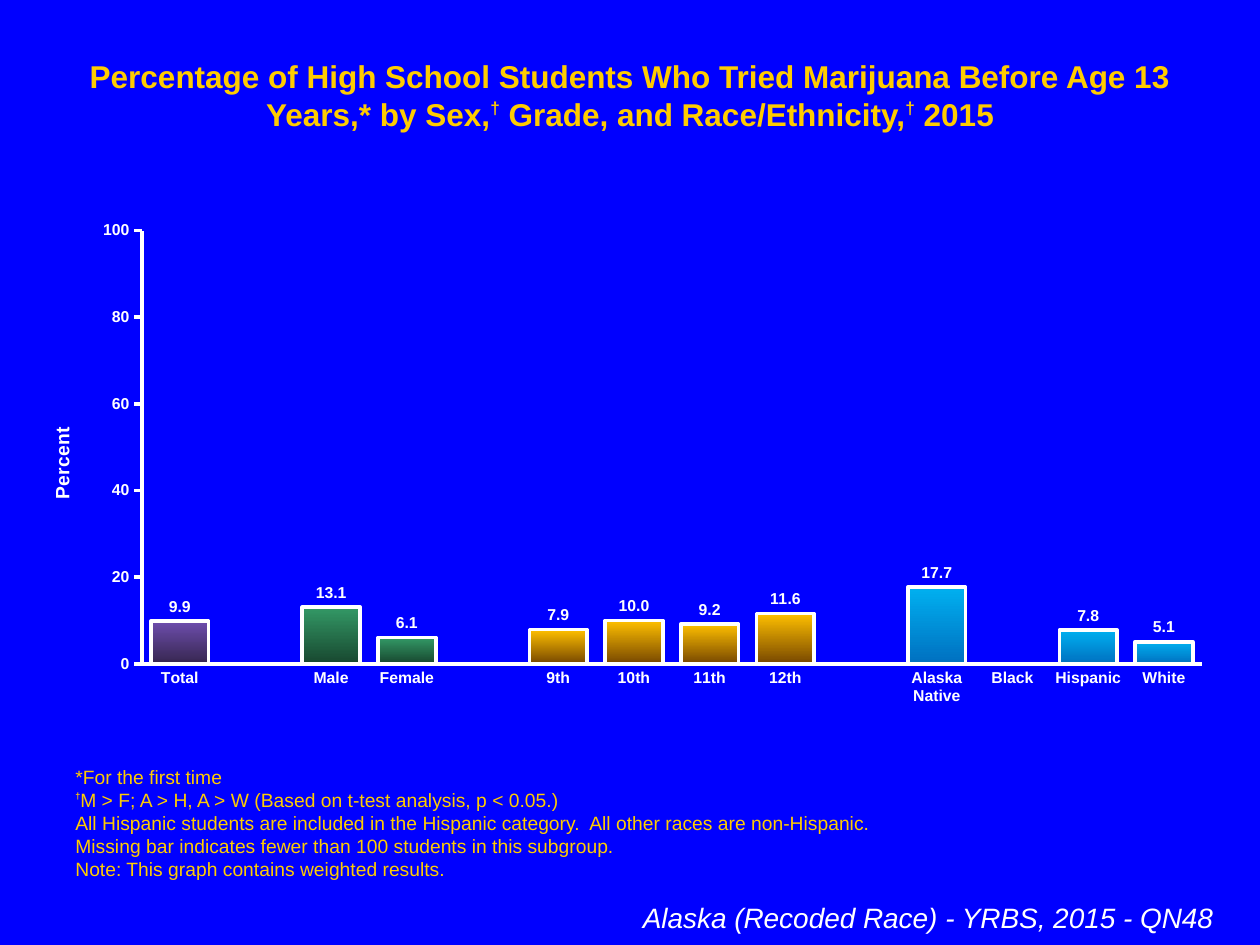
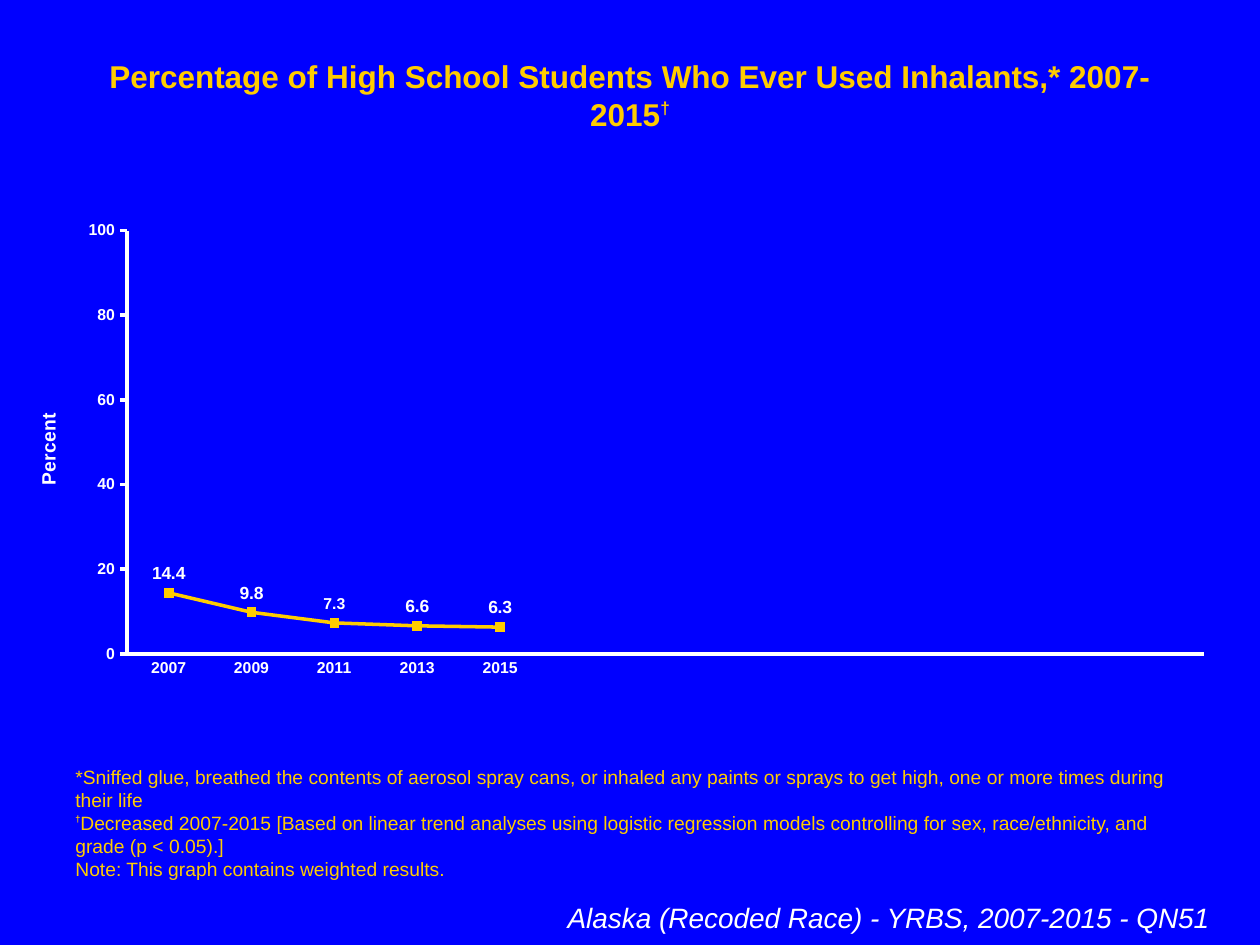
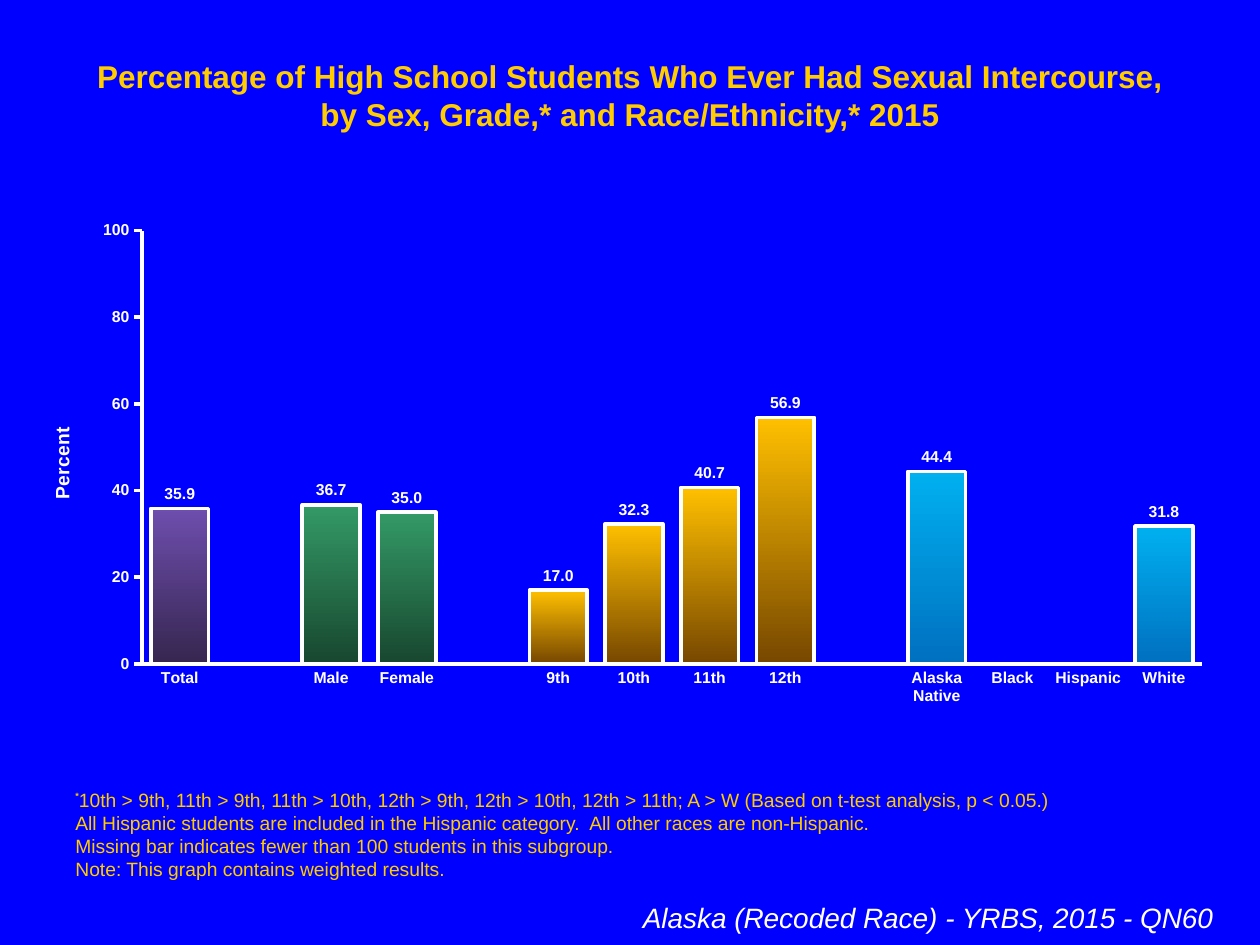
from dataclasses import dataclass
from typing import Any, Optional, Sequence

from lxml import etree
from pptx import Presentation
from pptx import util as u
from pptx.chart.data import CategoryChartData
from pptx.dml.color import RGBColor
from pptx.enum import chart as charts, text
from pptx.oxml.ns import qn

COLORS = {
    "page": "0000FF", "accent": "FFCC00", "ink": "FFFFFF",
    "violet": "6E4EAE", "violet_dark": "36264F",
    "green": "339966", "green_dark": "18472F",
    "gold": "FFC000", "gold_dark": "774700",
    "sky": "00B0F0", "sky_dark": "0070C0",
}
FONT = "Arial"
COLUMNS, ROWS = 100, 150
SLIDE_WIDTH, SLIDE_HEIGHT = u.Inches(10), u.Inches(7.5)

# Alternating plain and raised pieces, starting with a plain one
Line = Sequence[str]


@dataclass(frozen=True)
class Frame:
    """A place on the slide, in grid columns and rows."""
    left: float
    top: float
    width: float
    height: float

    def lengths(self) -> tuple[int, int, int, int]:
        column, row = SLIDE_WIDTH / COLUMNS, SLIDE_HEIGHT / ROWS
        return (round(self.left * column), round(self.top * row),
                round(self.width * column), round(self.height * row))


@dataclass(frozen=True)
class TextStyle:
    size: float
    color: str
    align: text.PP_ALIGN = text.PP_ALIGN.LEFT
    anchor: text.MSO_ANCHOR = text.MSO_ANCHOR.TOP
    bold: bool = False
    italic: bool = False
    mark_size: float = 9
    mark_rise: int = 50


@dataclass(frozen=True)
class BarGroup:
    labels: Sequence[str]
    color: str


@dataclass(frozen=True)
class SurveySlide:
    title: Line
    notes: Sequence[Line]
    source: str
    values: Sequence[Optional[float]]
    is_trend: bool = False


TITLE_FRAME = Frame(5, 8, 90, 8)
NOTES_FRAME = Frame(5, 135, 90, 5.8)
BAR_SOURCE_FRAME = Frame(3.3, 142, 94, 7.4)
TREND_SOURCE_FRAME = Frame(19.2, 142, 77.8, 7.4)
BAR_CHART_FRAME = Frame(1.7, 33.4, 95.6, 80)
TREND_CHART_FRAME = Frame(2.5, 33.4, 95, 80)
# Plot areas as shares of the chart: x, y, width, height
BAR_PLOT = (0.1, 0.04, 0.88, 0.86)
TREND_PLOT = (0.08, 0.04, 0.9, 0.84)

TITLE = TextStyle(18, "accent", text.PP_ALIGN.CENTER, bold=True,
                  mark_size=17, mark_rise=40)
NOTES = TextStyle(11, "accent", anchor=text.MSO_ANCHOR.BOTTOM)
SOURCE = TextStyle(16, "ink", text.PP_ALIGN.RIGHT, italic=True)

BAR_GROUPS = (
    BarGroup(("Total",), "violet"),
    BarGroup(("Male", "Female"), "green"),
    BarGroup(("9th", "10th", "11th", "12th"), "gold"),
    BarGroup(("Alaska Native", "Black", "Hispanic", "White"), "sky"),
)
TREND_YEARS = ("2007", "2009", "2011", "2013", "2015")
TREND_SLOTS = 13

WEIGHTED = ("Note: This graph contains weighted results.",)
SUBGROUP_NOTES = (
    ("All Hispanic students are included in the Hispanic category.  "
     "All other races are non-Hispanic.",),
    ("Missing bar indicates fewer than 100 students in this subgroup.",),
    WEIGHTED,
)

SLIDES = (
    SurveySlide(
        ("Percentage of High School Students Who Tried Marijuana Before Age 13 "
         "Years,* by Sex,", "†", " Grade, and Race/Ethnicity,", "†", " 2015"),
        (("*For the first time",),
         ("", "†", "M > F; A > H, A > W (Based on t-test analysis, p < 0.05.)"),
         *SUBGROUP_NOTES),
        "Alaska (Recoded Race) - YRBS, 2015 - QN48",
        (9.9, 13.1, 6.1, 7.9, 10, 9.2, 11.6, 17.7, None, 7.8, 5.1),
    ),
    SurveySlide(
        ("Percentage of High School Students Who Ever Used Inhalants,* 2007-2015",
         "†"),
        (("*Sniffed glue, breathed the contents of aerosol spray cans, or inhaled "
          "any paints or sprays to get high, one or more times during their life",),
         ("", "†", "Decreased 2007-2015 [Based on linear trend analyses using "
          "logistic regression models controlling for sex, race/ethnicity, and "
          "grade (p < 0.05).]"),
         WEIGHTED),
        "Alaska (Recoded Race) - YRBS, 2007-2015 - QN51",
        (14.4, 9.8, 7.3, 6.6, 6.3),
        is_trend=True,
    ),
    SurveySlide(
        ("Percentage of High School Students Who Ever Had Sexual Intercourse, "
         "by Sex, Grade,* and Race/Ethnicity,* 2015",),
        (("", "*", "10th > 9th, 11th > 9th, 11th > 10th, 12th > 9th, 12th > 10th, "
          "12th > 11th; A > W (Based on t-test analysis, p < 0.05.)"),
         *SUBGROUP_NOTES),
        "Alaska (Recoded Race) - YRBS, 2015 - QN60",
        (35.9, 36.7, 35, 17, 32.3, 40.7, 56.9, 44.4, None, None, 31.8),
    ),
)


def rgb(name: str) -> RGBColor:
    return RGBColor.from_string(COLORS[name])


def apply(target: Any, **values: Any) -> None:
    for name, value in values.items():
        setattr(target, name, value)


def format_font(font: Any, size: float, color: str = "ink", bold: bool = True,
                italic: bool = False) -> None:
    apply(font, name=FONT, size=u.Pt(size), bold=bold, italic=italic)
    font.color.rgb = rgb(color)


def place(box: Any, frame: Frame) -> None:
    left, top, width, height = frame.lengths()
    apply(box, left=left, top=top, width=width, height=height)


def write(box: Any, lines: Sequence[Line], style: TextStyle) -> None:
    body = box.text_frame
    apply(body, word_wrap=True, vertical_anchor=style.anchor,
          auto_size=text.MSO_AUTO_SIZE.SHAPE_TO_FIT_TEXT)
    for number, line in enumerate(lines):
        para = body.add_paragraph() if number else body.paragraphs[0]
        para.alignment = style.align
        for position, piece in enumerate(line):
            if not piece:
                continue
            raised = position % 2 == 1
            span = para.add_run()
            span.text = piece
            format_font(span.font, style.mark_size if raised else style.size,
                        style.color, style.bold or raised, style.italic)
            if raised:
                span._r.get_or_add_rPr().set("baseline", str(style.mark_rise * 1000))


def add_text(page: Any, frame: Frame, lines: Sequence[Line], style: TextStyle) -> None:
    box = page.shapes.add_textbox(*frame.lengths())
    write(box, lines, style)
    place(box, frame)


def draw_line(line: Any, color: str) -> None:
    line.color.rgb = rgb(color)
    line.width = u.Pt(2)


def fix_plot_area(chart: Any, shares: Sequence[float]) -> None:
    """Set the inner plot area by hand."""
    area = chart._chartSpace.chart.plotArea
    for old in area.findall(qn("c:layout")):
        area.remove(old)
    layout = etree.Element(qn("c:layout"))
    manual = etree.SubElement(layout, qn("c:manualLayout"))
    settings = {"layoutTarget": "inner", "xMode": "edge", "yMode": "edge",
                **dict(zip("xywh", shares))}
    for name, value in settings.items():
        etree.SubElement(manual, qn(f"c:{name}")).set("val", str(value))
    area.insert(0, layout)


def format_axes(chart: Any) -> None:
    ticks = charts.XL_TICK_MARK
    for axis, mark in ((chart.category_axis, ticks.NONE),
                       (chart.value_axis, ticks.OUTSIDE)):
        apply(axis, has_major_gridlines=False, major_tick_mark=mark,
              minor_tick_mark=ticks.NONE)
        format_font(axis.tick_labels.font, 9)
        draw_line(axis.format.line, "ink")
    percent = chart.value_axis
    apply(percent, minimum_scale=0, maximum_scale=100, major_unit=20)
    apply(percent.tick_labels, number_format="#,##0", number_format_is_linked=False)
    title = percent.axis_title.text_frame
    title.text = "Percent"
    format_font(title.paragraphs[0].runs[0].font, 11)
    direction = title._txBody.bodyPr
    direction.set("rot", "-5400000")
    direction.set("vert", "horz")


def add_survey_chart(page: Any, kind: Any, frame: Frame, plot: Sequence[float],
                     labels: Sequence[str], values: Sequence[Optional[float]],
                     label_size: float, label_position: Any) -> Any:
    data = CategoryChartData()
    data.categories = labels
    data.add_series("Series 1", values)
    chart = page.shapes.add_chart(kind, *frame.lengths(), data).chart
    apply(chart, has_legend=False, has_title=False)
    format_font(chart.font, 18, bold=False)
    format_axes(chart)
    fix_plot_area(chart, plot)
    bars = chart.plots[0]
    apply(bars, vary_by_categories=False, has_data_labels=True)
    apply(bars.data_labels, show_value=True, number_format="#,##0.0",
          number_format_is_linked=False, position=label_position)
    format_font(bars.data_labels.font, label_size)
    return chart


def add_bars(page: Any, values: Sequence[Optional[float]]) -> None:
    """Draw the groups side by side, with one empty slot between them."""
    labels: list[str] = []
    slots: list[Optional[float]] = []
    colors: dict[int, str] = {}
    remaining = iter(values)
    for group in BAR_GROUPS:
        if labels:
            labels.append("")
            slots.append(None)
        for label in group.labels:
            colors[len(labels)] = group.color
            labels.append(label)
            slots.append(next(remaining))
    chart = add_survey_chart(page, charts.XL_CHART_TYPE.COLUMN_CLUSTERED,
                             BAR_CHART_FRAME, BAR_PLOT, labels, slots, 9,
                             charts.XL_LABEL_POSITION.OUTSIDE_END)
    apply(chart.plots[0], gap_width=31, overlap=100)
    series = chart.plots[0].series[0]
    for slot, color in colors.items():
        look = series.points[slot].format
        look.fill.gradient()
        look.fill.gradient_angle = 270
        for stop, shade in zip(look.fill.gradient_stops, (color, f"{color}_dark")):
            stop.color.rgb = rgb(shade)
        draw_line(look.line, "ink")


def add_trend(page: Any, values: Sequence[Optional[float]]) -> None:
    empty = TREND_SLOTS - len(TREND_YEARS)
    above = charts.XL_LABEL_POSITION.ABOVE
    chart = add_survey_chart(page, charts.XL_CHART_TYPE.LINE_MARKERS,
                             TREND_CHART_FRAME, TREND_PLOT,
                             [*TREND_YEARS, *[""] * empty],
                             [*values, *[None] * empty], 10, above)
    series = chart.plots[0].series[0]
    series.smooth = False
    draw_line(series.format.line, "accent")
    apply(series.marker, style=charts.XL_MARKER_STYLE.SQUARE, size=5)
    series.marker.format.fill.solid()
    series.marker.format.fill.fore_color.rgb = rgb("accent")
    series.marker.format.line.color.rgb = rgb("accent")
    labels = series.data_labels
    apply(labels, show_value=True, number_format="#,##0.0",
          number_format_is_linked=False, position=above)
    format_font(labels.font, 10)
    middle_label = series.points[2].data_label
    format_font(middle_label.font, 9)
    middle_label.position = above


def add_survey_slide(deck: Any, survey: SurveySlide) -> None:
    page = deck.slides.add_slide(deck.slide_layouts.get_by_name("Title Only"))
    write(page.shapes.title, [survey.title], TITLE)
    place(page.shapes.title, TITLE_FRAME)
    add_text(page, NOTES_FRAME, survey.notes, NOTES)
    source_frame = TREND_SOURCE_FRAME if survey.is_trend else BAR_SOURCE_FRAME
    add_text(page, source_frame, [(survey.source,)], SOURCE)
    draw_chart = add_trend if survey.is_trend else add_bars
    draw_chart(page, survey.values)


def main() -> None:
    deck = Presentation()
    apply(deck, slide_width=SLIDE_WIDTH, slide_height=SLIDE_HEIGHT)
    backdrop = deck.slide_master.background.fill
    backdrop.solid()
    backdrop.fore_color.rgb = rgb("page")
    for survey in SLIDES:
        add_survey_slide(deck, survey)
    deck.save("out.pptx")


if __name__ == "__main__":
    main()
